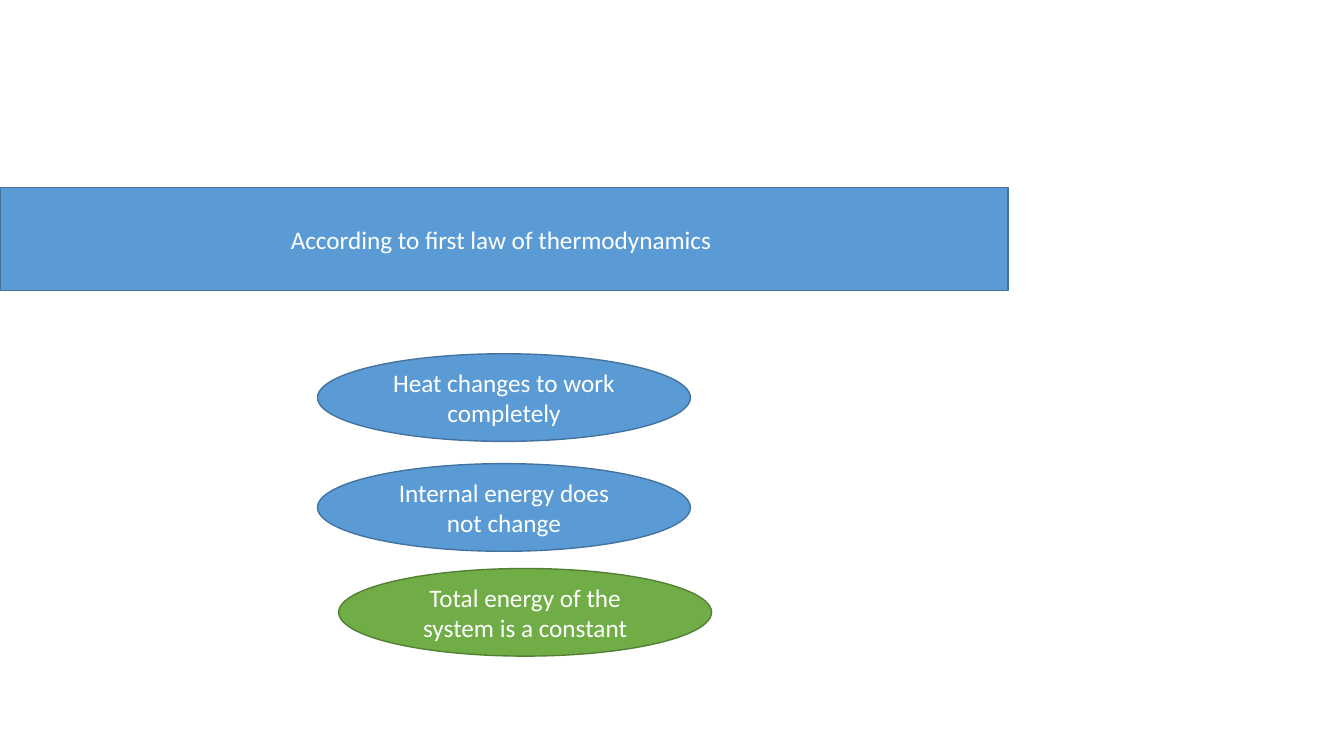
from pptx import Presentation
from pptx import util as u
from pptx.dml import color as clr
from pptx.enum import shapes, text as txt

THEME = {
    "font": "Calibri",
    "size": 18,
    "ink": "FFFFFF",
    "blue": ("5B9BD5", "43739E"),
    "green": ("70AD47", "538035"),
}

deck = Presentation()
deck.slide_width, deck.slide_height = u.Pt(960), u.Pt(540)
slide = deck.slides.add_slide(deck.slide_layouts[6])


def add_label(words, *, kind, box, tone="blue"):
    """Add a filled shape with centred text; box is left, top, width, height."""
    shape = slide.shapes.add_shape(kind, *[u.Pt(n) for n in box])
    shape.shadow.inherit = False
    fill, edge = THEME[tone]
    shape.fill.solid()
    shape.fill.fore_color.rgb = clr.RGBColor.from_string(fill)
    shape.line.color.rgb = clr.RGBColor.from_string(edge)
    shape.line.width = u.Pt(1)
    frame = shape.text_frame
    frame.word_wrap = True
    frame.vertical_anchor = txt.MSO_ANCHOR.MIDDLE
    para = frame.paragraphs[0]
    para.alignment = txt.PP_ALIGN.CENTER
    run = para.add_run()
    run.text = words
    run.font.name = THEME["font"]
    run.font.size = u.Pt(THEME["size"])
    run.font.color.rgb = clr.RGBColor.from_string(THEME["ink"])


# Banner
add_label("According to first law of thermodynamics ",
          kind=shapes.MSO_SHAPE.RECTANGLE, box=(0, 133.9, 720, 73.5))

# Statements
facts = [
    ("Heat changes to work completely", 226.8, 252.7, "blue"),
    ("Internal energy does not change", 226.8, 331.2, "blue"),
    ("Total energy of the system is a constant", 241.9, 406.1, "green"),
]
for words, left, top, tone in facts:
    add_label(words, kind=shapes.MSO_SHAPE.OVAL,
              box=(left, top, 266.4, 62.6), tone=tone)

deck.save("out.pptx")
